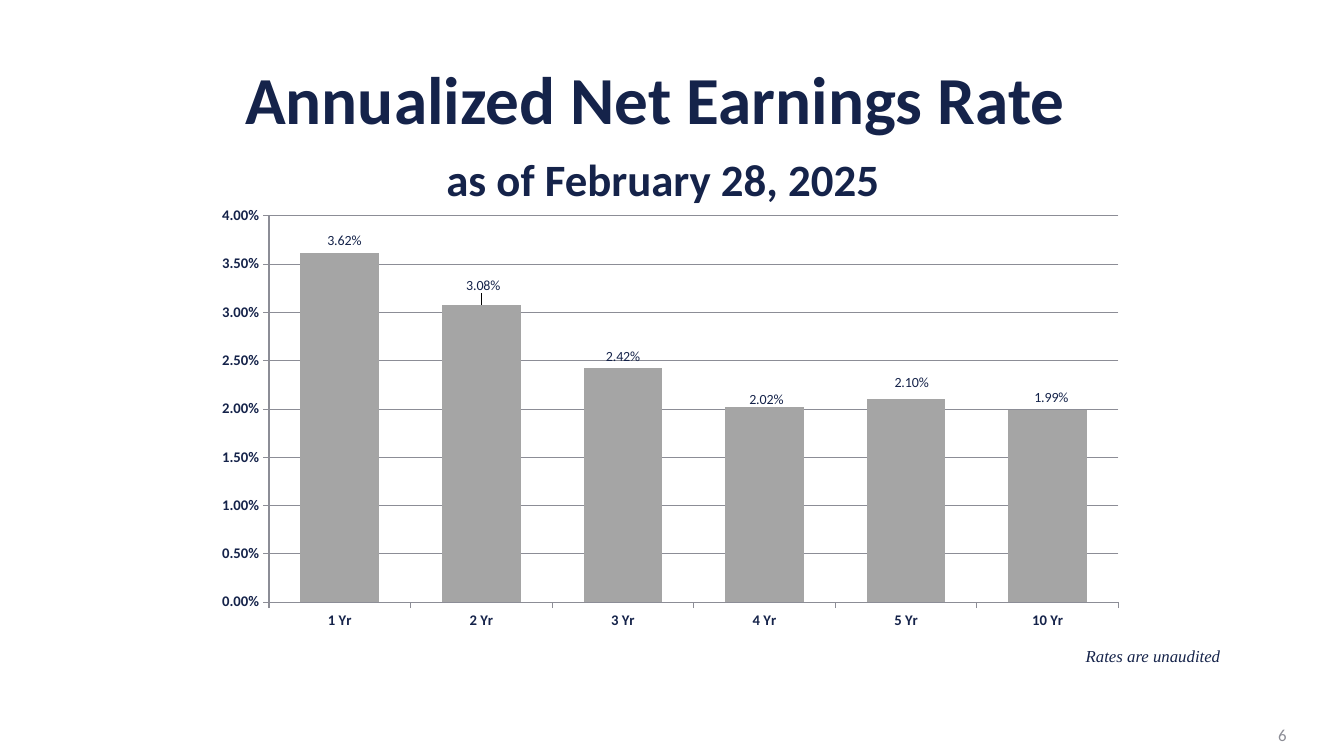
from dataclasses import dataclass
from lxml.etree import SubElement as Sub
from pptx import Presentation
from pptx.chart.data import CategoryChartData as Data
from pptx.dml.color import RGBColor as RGB
from pptx.enum.chart import XL_CHART_TYPE as Kind, XL_LABEL_POSITION as Pos, XL_TICK_MARK as Tick
from pptx.enum.text import MSO_ANCHOR as Anchor, PP_ALIGN as Align
from pptx.oxml.ns import qn
from pptx.util import Inches, Pt


@dataclass(frozen=True)
class Theme:
    ink: RGB = RGB(0x15, 0x23, 0x4A)
    bar: RGB = RGB(0xA5, 0xA5, 0xA5)
    line: RGB = RGB(0x8C, 0x8D, 0x96)
    sans: str = "Calibri"
    serif: str = "Times New Roman"
    head: float = 48
    sub: float = 32
    base: float = 18
    note: float = 12
    tick: float = 10.5
    label: float = 10


theme = Theme()
WIDE, HIGH = 13.33, 7.5
RATES = {
    "1 Yr": (0.0362, 0.005, 0),
    "2 Yr": (0.0308, 0.002, -0.015),
    "3 Yr": (0.0242, 0, 0),
    "4 Yr": (0.0202, 0.002, 0.01),
    "5 Yr": (0.021, 0.006, -0.01),
    "10 Yr": (0.0199, 0.004, 0),
}


def style(font, size, color=theme.ink, face=theme.sans, bold=False, slant=False):
    font.name, font.size, font.bold, font.italic = face, Pt(size), bold, slant
    font.color.rgb = color


def write(para, text, size, **look):
    run = para.add_run()
    run.text = text
    style(run.font, size, **look)


def frame(slide, box, align, anchor):
    text = slide.shapes.add_textbox(*map(Inches, box)).text_frame
    text.word_wrap = True
    text.vertical_anchor = anchor
    para = text.paragraphs[0]
    para.alignment = align
    return para


def title(slide, box):
    para = frame(slide, box, Align.CENTER, Anchor.MIDDLE)
    para.line_spacing = 0.9
    write(para, "Annualized Net Earnings Rate", theme.head, bold=True)
    para.add_line_break()
    write(para, " ", theme.head, bold=True)
    write(para, "as of February 28, 2025", theme.sub, bold=True)


def place(layout, **parts):
    manual = Sub(layout, qn("c:manualLayout"))
    for key, val in parts.items():
        Sub(manual, qn("c:" + key)).set("val", str(val))


def fit(plot):
    area = plot._element.getparent()
    for old in area.findall(qn("c:layout")):
        area.remove(old)
    layout = Sub(area, qn("c:layout"))
    area.insert(0, layout)
    place(layout, layoutTarget="inner", xMode="edge", yMode="edge",
          x=0.065, y=0.031, w=0.931, h=0.833)


def label(bars):
    for spot in range(len(RATES)):
        tag = bars.points[spot].data_label
        style(tag.font, theme.label)
        tag.position = Pos.OUTSIDE_END
    nodes = bars._element.findall(qn("c:dLbls") + "/" + qn("c:dLbl"))
    for node, (rate, x, y) in zip(nodes, RATES.values()):
        layout = Sub(node, qn("c:layout"))
        node.insert(1, layout)
        place(layout, x=x, y=y)


def graph(slide, box):
    data = Data(number_format="0.00%")
    data.categories = list(RATES)
    data.add_series("Series 1", [rate for rate, x, y in RATES.values()])
    chart = slide.shapes.add_chart(Kind.COLUMN_CLUSTERED, *map(Inches, box), data).chart
    chart.has_legend = chart.has_title = False
    style(chart.font, theme.base)
    for axis in (chart.category_axis, chart.value_axis):
        style(axis.tick_labels.font, theme.tick, bold=True)
        axis.major_tick_mark = Tick.OUTSIDE
        axis.minor_tick_mark = Tick.NONE
        axis.format.line.color.rgb = theme.line
        axis.format.line.width = Pt(0.75)
    scale = chart.value_axis
    scale.minimum_scale, scale.maximum_scale, scale.major_unit = 0, 0.04, 0.005
    scale.tick_labels.number_format = "0.00%"
    scale.tick_labels.number_format_is_linked = False
    scale.major_gridlines.format.line.color.rgb = theme.line
    scale.major_gridlines.format.line.width = Pt(0.75)
    plot = chart.plots[0]
    plot.gap_width = 80
    plot.vary_by_categories = False
    plot.has_data_labels = True
    tags = plot.data_labels
    tags.show_value = True
    tags.number_format, tags.number_format_is_linked = "0.00%", False
    style(tags.font, theme.label)
    bars = plot.series[0]
    bars.format.fill.solid()
    bars.format.fill.fore_color.rgb = theme.bar
    label(bars)
    fit(plot)


def note(slide, box):
    para = frame(slide, box, Align.LEFT, Anchor.TOP)
    write(para, "Rates are unaudited", theme.note, face=theme.serif, slant=True)


def folio(slide, box):
    para = frame(slide, box, Align.RIGHT, Anchor.MIDDLE)
    write(para, "6", theme.note, color=theme.line)


def main():
    deck = Presentation()
    deck.slide_width, deck.slide_height = Inches(WIDE), Inches(HIGH)
    slide = deck.slides.add_slide(deck.slide_layouts[6])
    title(slide, (0.5, 0.93, 12, 0.89))
    graph(slide, (2.08, 2, 9.05, 4.6))
    folio(slide, (9.86, 7.09, 3, 0.4))
    note(slide, (10.67, 6.36, 2.33, 0.3))
    deck.save("out.pptx")


if __name__ == "__main__":
    main()
